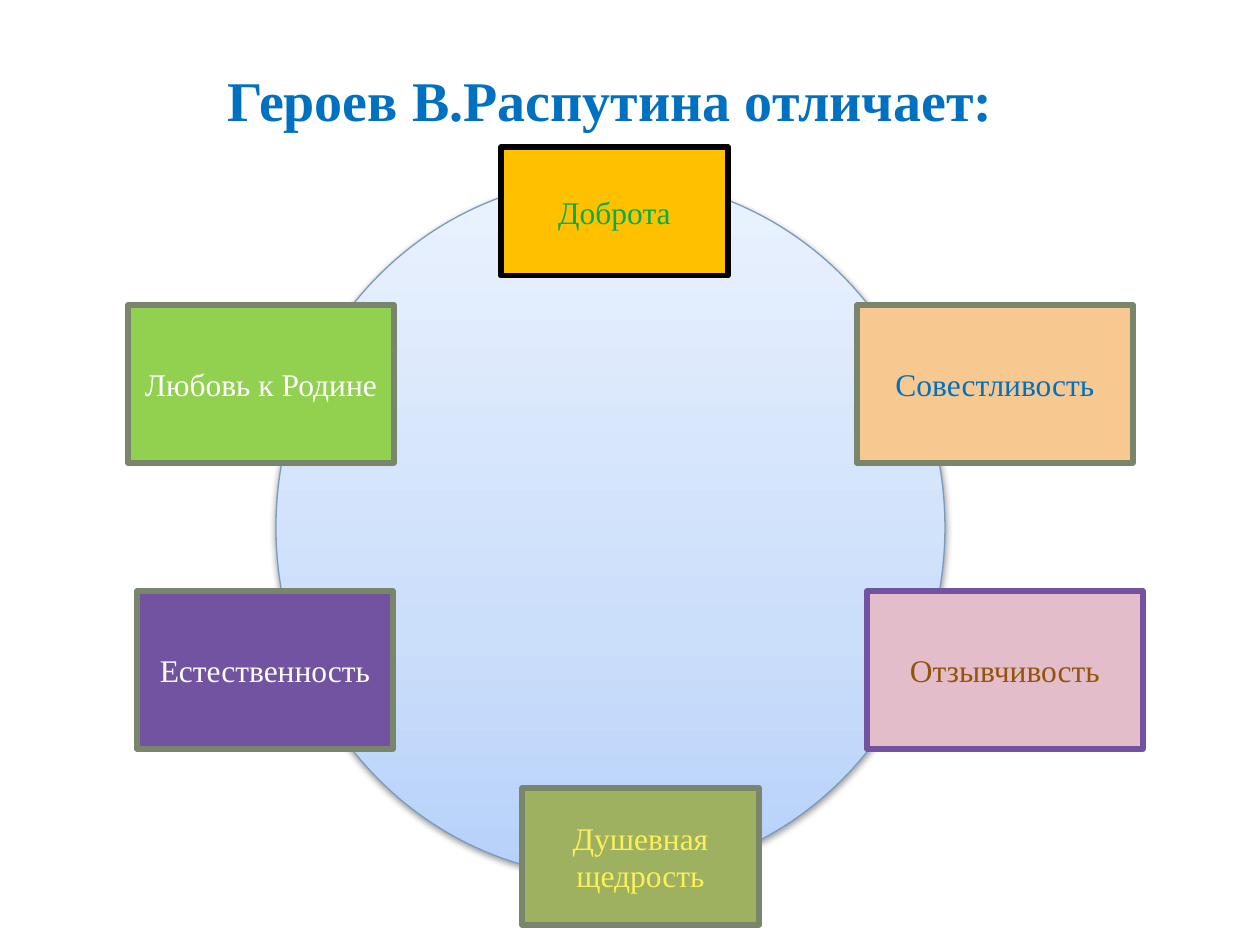
from copy import deepcopy
from lxml import etree
from pptx import Presentation
from pptx.dml.color import RGBColor
from pptx.enum.shapes import MSO_SHAPE
from pptx.enum.text import MSO_ANCHOR, PP_ALIGN
from pptx.oxml import parse_xml
from pptx.oxml.ns import qn
from pptx.util import Pt

RECT, OVAL = MSO_SHAPE.RECTANGLE, MSO_SHAPE.OVAL
MIDDLE, TOP = MSO_ANCHOR.MIDDLE, MSO_ANCHOR.TOP
CENTER = PP_ALIGN.CENTER
PX = 914400 // 126
FONT = "Times New Roman"

COLORS = {
    "blue": "0070C0", "black": "000000", "white": "FFFFFF",
    "gold": "FFC000", "green": "00B050", "peach": "F8C891",
    "gray": "7A866C", "pink": "E3BECA", "violet": "7153A1",
    "brown": "93540A", "olive": "9EB160", "yellow": "FCF059",
    "lime": "92D050", "rim": "7C9ABF",
    "deep": "B6D1FA", "mid": "CBDEFA", "pale": "EAF2FE",
}

TITLE = "Героев В.Распутина отличает:"
TITLE_BOX = (197, 59, 827, 81)
CIRCLE = (276, 178, 669, 699)
STOPS = [(0, "deep"), (0.35, "mid"), (1, "pale")]
UPPER, LOWER, HIGH = 305, 591, 158
TRAITS = [
    ("Доброта", (501, 147, 227, 129), "gold", "black", "green"),
    ("Совестливость", (857, UPPER, 276, HIGH), "peach", "gray", "blue"),
    ("Отзывчивость", (867, LOWER, 276, HIGH), "pink", "violet", "brown"),
    ("Душевная щедрость", (522, 788, 237, 137), "olive", "gray", "yellow"),
    ("Любовь к Родине", (128, UPPER, 266, HIGH), "lime", "gray", "white"),
    ("Естественность", (137, LOWER, 256, HIGH), "violet", "gray", "white"),
]
SHADOW = (
    '<a:outerShdw xmlns:a="http://schemas.openxmlformats.org/drawingml/2006/main"'
    ' blurRad="40000" dist="20000" dir="5400000" rotWithShape="0">'
    '<a:srgbClr val="000000"><a:alpha val="38000"/></a:srgbClr></a:outerShdw>'
)


def rgb(name):
    return RGBColor.from_string(COLORS[name])


def scale(box):
    return [n * PX for n in box]


def write(shape, text, size=18, color="white", bold=False, anchor=MIDDLE):
    frame = shape.text_frame
    frame.word_wrap = True
    frame.vertical_anchor = anchor
    para = frame.paragraphs[0]
    para.alignment = CENTER
    run = para.add_run()
    run.text = text
    font = run.font
    font.name, font.size, font.bold = FONT, Pt(size), bold
    font.color.rgb = rgb(color)


def draw(slide, kind, box, line, width):
    shape = slide.shapes.add_shape(kind, *scale(box))
    shape.shadow.inherit = False
    shape.line.color.rgb = rgb(line)
    shape.line.width = Pt(width)
    return shape


def shade(shape):
    shape.fill.gradient()
    shape.fill.gradient_angle = 90
    props = shape.element.spPr
    stops = props.find(".//" + qn("a:gsLst"))
    stops.insert(1, deepcopy(stops[0]))
    for stop, (place, color) in zip(shape.fill.gradient_stops, STOPS):
        stop.position = place
        stop.color.rgb = rgb(color)
    props.find(qn("a:effectLst")).append(parse_xml(SHADOW))


def main():
    deck = Presentation()
    deck.slide_width, deck.slide_height = 1260 * PX, 945 * PX
    slide = deck.slides.add_slide(deck.slide_layouts[5])

    title = slide.shapes.title
    title.left, title.top, title.width, title.height = scale(TITLE_BOX)
    write(title, TITLE, size=32, color="blue", bold=True, anchor=TOP)

    shade(draw(slide, OVAL, CIRCLE, "rim", 0.75))

    for text, box, fill, line, color in TRAITS:
        shape = draw(slide, RECT, box, line, 3)
        shape.fill.solid()
        shape.fill.fore_color.rgb = rgb(fill)
        write(shape, text, color=color)

    deck.save("out.pptx")


if __name__ == "__main__":
    main()
